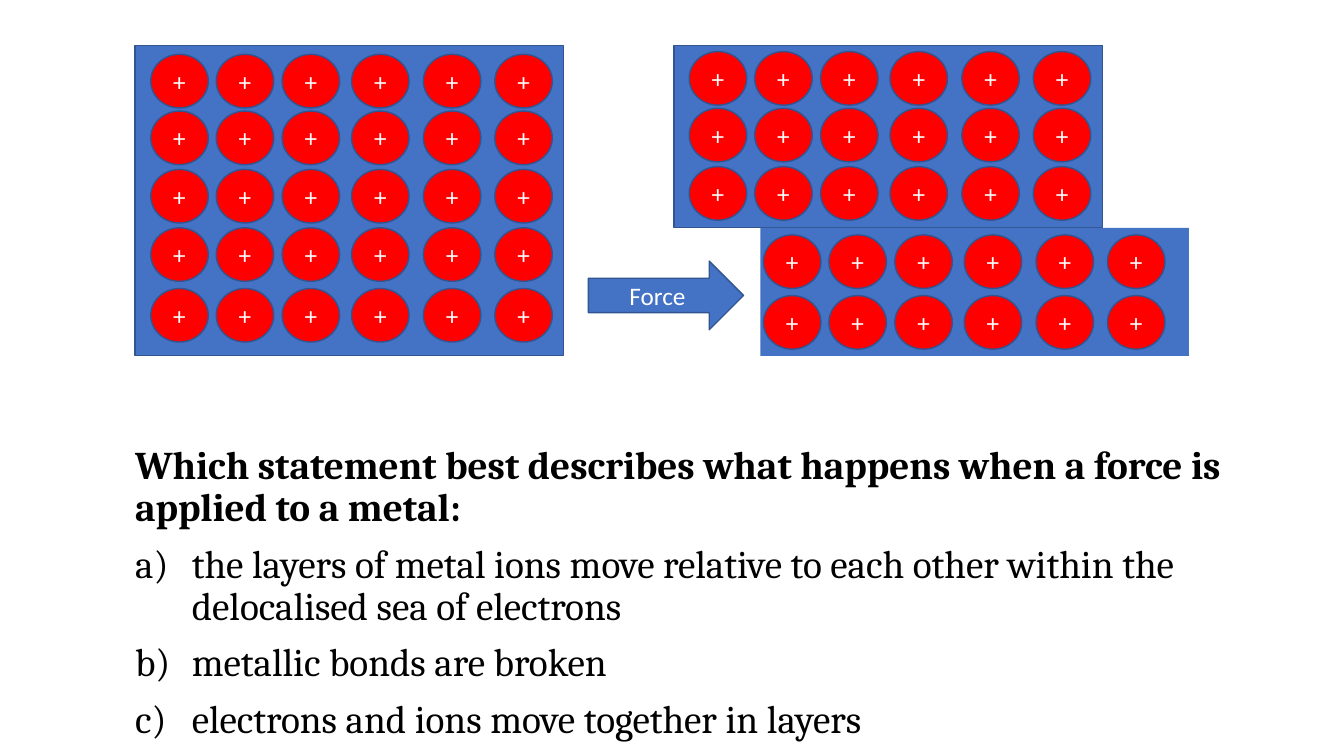
from dataclasses import dataclass

from lxml import etree
from pptx import Presentation
from pptx.dml.color import RGBColor
from pptx.enum import shapes, text
from pptx.oxml import ns
from pptx.util import Cm, Pt


@dataclass(frozen=True)
class Theme:
    sea: str = "4472C4"
    ion: str = "FF0000"
    outline: str = "325491"
    label: str = "FFFFFF"
    body: str = "000000"
    label_font: str = "Calibri"
    body_font: str = "Cambria"
    label_size: int = 18
    body_size: int = 28


THEME = Theme()

# Ion spacing in cm, measured from the first ion of the lattice
COLUMNS = (0, 1.65, 3.31, 5.06, 6.87, 8.67)
ROWS = (0, 1.43, 2.9, 4.37, 5.9)
ION_SIZE = (1.45, 1.35)

QUESTION = "Which statement best describes what happens when a force is applied to a metal:"
ANSWERS = (
    "the layers of metal ions move relative to each other within the delocalised sea of electrons",
    "metallic bonds are broken",
    "electrons and ions move together in layers",
)


def write(paragraph, words, *, font, size, color, bold=False, align=None):
    paragraph.alignment = align
    run = paragraph.add_run()
    run.text = words
    run.font.name = font
    run.font.size = Pt(size)
    run.font.bold = bold
    run.font.color.rgb = RGBColor.from_string(color)


def add_figure(slide, preset, box, fill, label=None, outlined=True):
    figure = slide.shapes.add_shape(preset, *(Cm(length) for length in box))
    figure.shadow.inherit = False
    figure.fill.solid()
    figure.fill.fore_color.rgb = RGBColor.from_string(fill)
    if outlined:
        figure.line.color.rgb = RGBColor.from_string(THEME.outline)
        figure.line.width = Pt(1)
    else:
        figure.line.fill.background()
    if label:
        figure.text_frame.vertical_anchor = text.MSO_ANCHOR.MIDDLE
        write(figure.text_frame.paragraphs[0], label, font=THEME.label_font,
              size=THEME.label_size, color=THEME.label, align=text.PP_ALIGN.CENTER)


def add_sea(slide, box, outlined=True):
    add_figure(slide, shapes.MSO_SHAPE.RECTANGLE, box, THEME.sea, outlined=outlined)


def add_ions(slide, left, top, rows):
    for column in COLUMNS:
        for row in rows:
            place = (left + column, top + row - rows[0])
            add_figure(slide, shapes.MSO_SHAPE.OVAL, place + ION_SIZE, THEME.ion, "+")


def set_numbering(paragraph, numbered):
    props = paragraph._p.get_or_add_pPr()
    hang = Cm(1.43) if numbered else 0
    props.set("marL", str(hang))
    props.set("indent", str(-hang))
    if numbered:
        etree.SubElement(props, ns.qn("a:buFont"), typeface=THEME.body_font)
        etree.SubElement(props, ns.qn("a:buAutoNum"), type="alphaLcParenR")
    else:
        etree.SubElement(props, ns.qn("a:buNone"))


def add_question(slide):
    question = slide.placeholders[1]
    question.left, question.top = Cm(3.15), Cm(11.1)
    question.width, question.height = Cm(28.45), Cm(7.65)
    frame = question.text_frame
    frame.word_wrap = True
    frame.auto_size = text.MSO_AUTO_SIZE.NONE
    frame.vertical_anchor = text.MSO_ANCHOR.TOP
    for index, words in enumerate((QUESTION,) + ANSWERS):
        is_answer = index > 0
        paragraph = frame.add_paragraph() if is_answer else frame.paragraphs[0]
        write(paragraph, words, font=THEME.body_font, size=THEME.body_size,
              color=THEME.body, bold=not is_answer)
        paragraph.line_spacing = 0.9
        paragraph.space_before = Pt(10 if is_answer else 0)
        set_numbering(paragraph, is_answer)


def main():
    deck = Presentation()
    deck.slide_width, deck.slide_height = Cm(33.87), Cm(19.05)
    slide = deck.slides.add_slide(deck.slide_layouts[1])
    empty_title = slide.shapes.title.element
    empty_title.getparent().remove(empty_title)

    # Metal before the force
    add_sea(slide, (3.4, 1.14, 10.8, 7.82))
    add_ions(slide, 3.8, 1.37, ROWS)

    # Metal after the force: the lower layers have slid to the right
    add_sea(slide, (16.99, 1.14, 10.8, 4.6))
    add_sea(slide, (19.16, 5.74, 10.8, 3.23), outlined=False)
    add_ions(slide, 17.37, 1.3, ROWS[:3])
    add_ions(slide, 19.24, 5.92, ROWS[3:])

    # Force arrow
    add_figure(slide, shapes.MSO_SHAPE.RIGHT_ARROW, (14.83, 6.58, 3.91, 1.73),
               THEME.sea, "Force")

    # Question and answers
    add_question(slide)
    deck.save("out.pptx")


if __name__ == "__main__":
    main()
